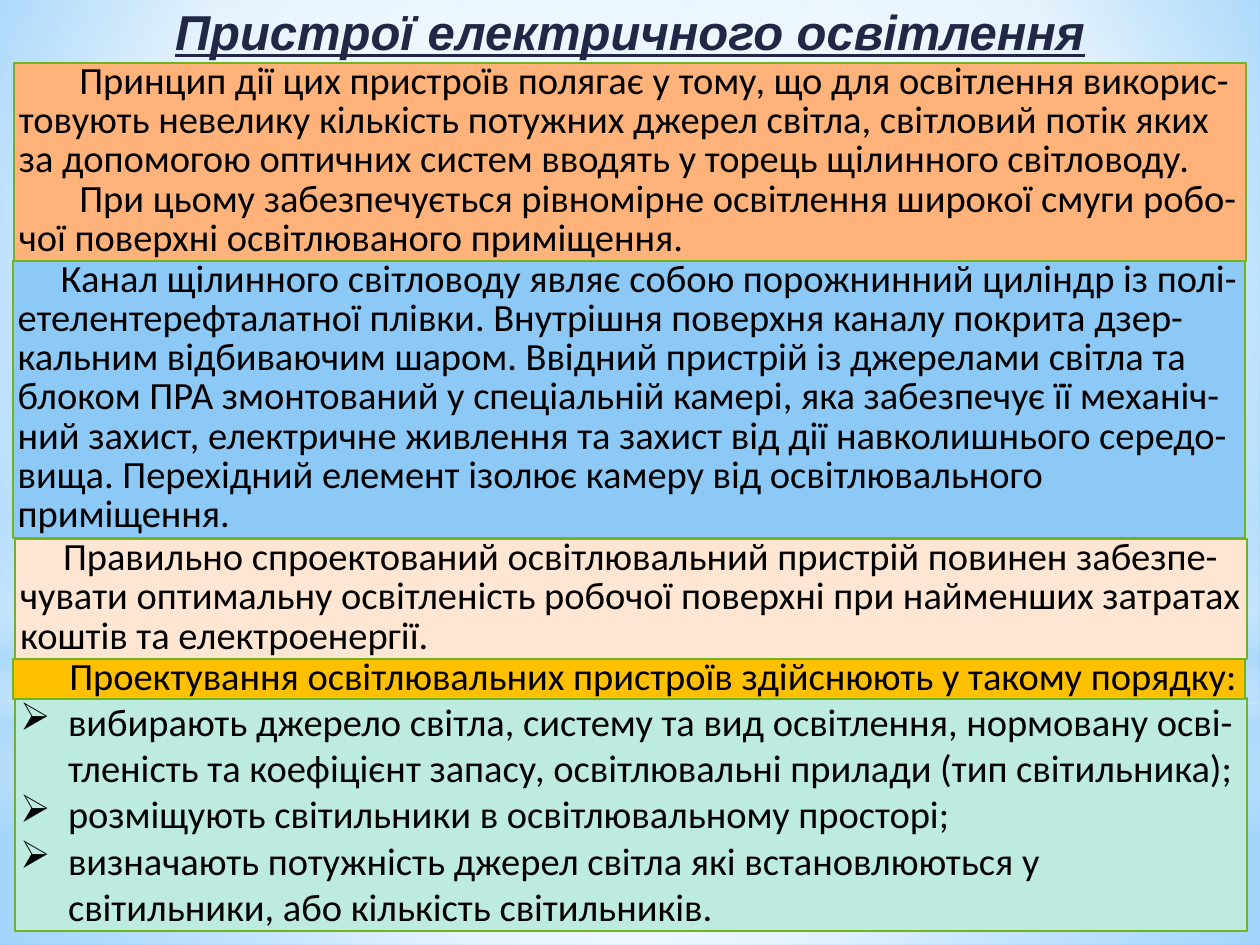
import pptx
import pptx.dml.color
import pptx.enum.shapes
import pptx.enum.text
import pptx.oxml
import pptx.oxml.ns
import pptx.util
from pptx.util import Inches

COLORS = {
    "title": "212745", "text": "000000", "border": "72B41D",
    "orange": "FFB37A", "blue": "8CC9F7", "peach": "FFE6D3",
    "mint": "BEEBDF", "amber": "FFC000",
    "white": "FFFFFF", "haze": "B4DCFA", "sky": "9ED5FF", "deep": "5BB9FF",
}
SHAPES = pptx.enum.shapes.MSO_SHAPE
CENTER = (50, 50, 50, 50)
PANEL_WIDTH = 9.78

# Background layers: shape, left, top, width, height, stops (position, color, opacity), focus
LAYERS = [
    (SHAPES.RECTANGLE, 0, 5.58, 10, 1.92,
     [(0, "white", 91), (37, "white", 76), (100, "haze", 79)], CENTER),
    (SHAPES.RECTANGLE, 0, 0, 10, 5.58,
     [(0, "white", 89), (48, "white", 62), (100, "haze", 79)], CENTER),
    (SHAPES.RECTANGLE, 0, 4.12, 10, 2.5,
     [(0, "white", 0), (29, "white", 30), (45, "haze", 40),
      (55, "white", 26), (65, "haze", 60), (100, "white", 0)], None),
    (SHAPES.OVAL, 0, 1.75, 10, 5.58,
     [(0, "white", 100), (56, "white", 0)], CENTER),
]

# Text panels: left, top, height, color, first-line indent, paragraphs
PANELS = [
    (0.11, 0.5, 1.57, "orange", 0.48, [
        "Принцип дії цих пристроїв полягає у тому, що для освітлення викорис-товують "
        "невелику кількість потужних джерел світла, світловий потік яких за допомогою "
        "оптичних систем вводять у торець щілинного світловоду.",
        "При цьому забезпечується рівномірне освітлення широкої смуги робо-чої "
        "поверхні освітлюваного приміщення."]),
    (0.1, 2.07, 2.2, "blue", 0.34, [
        "Канал щілинного світловоду являє собою порожнинний циліндр із "
        "полі-етелентерефталатної плівки. Внутрішня поверхня каналу покрита "
        "дзер-кальним відбиваючим шаром. Ввідний пристрій із джерелами світла та "
        "блоком ПРА змонтований у спеціальній камері, яка забезпечує її механіч-ний "
        "захист, електричне живлення та захист від дії навколишнього середо-вища. "
        "Перехідний елемент ізолює камеру від освітлювального приміщення."]),
    (0.12, 4.28, 0.95, "peach", 0.34, [
        "Правильно спроектований освітлювальний пристрій повинен забезпе-чувати "
        "оптимальну освітленість робочої поверхні при найменших затратах коштів та "
        "електроенергії."]),
    (0.1, 5.23, 0.32, "amber", 0.41, [
        "Проектування освітлювальних пристроїв здійснюють у такому порядку:"]),
]
STEPS = [
    "вибирають джерело світла, систему та вид освітлення, нормовану осві-тленість та "
    "коефіцієнт запасу, освітлювальні прилади (тип світильника);",
    "розміщують світильники в освітлювальному просторі;",
    "визначають потужність джерел світла які встановлюються у світильники, або "
    "кількість світильників.",
]


def rgb(name):
    return pptx.dml.color.RGBColor.from_string(COLORS[name])


def gradient(stops, focus):
    """Return a gradient fill: radial around focus, or vertical without one."""
    marks = "".join(
        f'<a:gs pos="{position * 1000}"><a:srgbClr val="{COLORS[color]}">'
        f'<a:alpha val="{opacity * 1000}"/></a:srgbClr></a:gs>'
        for position, color, opacity in stops)
    if focus:
        edges = " ".join(f'{side}="{value * 1000}"' for side, value in zip("ltrb", focus))
        direction = f'<a:path path="circle"><a:fillToRect {edges}/></a:path>'
    else:
        direction = '<a:lin ang="5400000" scaled="0"/>'
    return pptx.oxml.parse_xml(
        f'<a:gradFill {pptx.oxml.ns.nsdecls("a")} rotWithShape="1">'
        f'<a:gsLst>{marks}</a:gsLst>{direction}</a:gradFill>')


def replace_fill(solid, stops, focus):
    solid.getparent().replace(solid, gradient(stops, focus))


def add_background(slide):
    slide.background.fill.solid()
    solid = slide.element.xpath(".//p:bgPr/a:solidFill")[0]
    replace_fill(solid, [(0, "sky", 100), (60, "white", 100), (100, "deep", 100)],
                 (20, 10, 20, 60))
    for kind, left, top, width, height, stops, focus in LAYERS:
        layer = slide.shapes.add_shape(
            kind, Inches(left), Inches(top), Inches(width), Inches(height))
        layer.shadow.inherit = False
        layer.line.fill.background()
        layer.fill.solid()
        replace_fill(layer.element.xpath("./p:spPr/a:solidFill")[0], stops, focus)


def set_frame(box, side):
    frame = box.text_frame
    frame.word_wrap = True
    frame.auto_size = pptx.enum.text.MSO_AUTO_SIZE.SHAPE_TO_FIT_TEXT
    frame.vertical_anchor = pptx.enum.text.MSO_ANCHOR.TOP
    frame.margin_left = frame.margin_right = Inches(side)
    frame.margin_top = frame.margin_bottom = 0
    return frame


def add_span(para, text, font, size, color):
    span = para.add_run()
    span.text = text
    span.font.name = font
    span.font.size = pptx.util.Pt(size)
    span.font.color.rgb = rgb(color)
    return span


def add_title(slide, text):
    box = slide.shapes.add_textbox(Inches(0.12), Inches(0.08), Inches(9.76), Inches(0.4))
    para = set_frame(box, 0).paragraphs[0]
    para.alignment = pptx.enum.text.PP_ALIGN.CENTER
    para.line_spacing = 0.85
    span = add_span(para, text, "Arial", 28, "title")
    span.font.bold = span.font.italic = span.font.underline = True


def add_panel(slide, left, top, height, color, indent, texts, bullet=None):
    box = slide.shapes.add_shape(
        SHAPES.RECTANGLE, Inches(left), Inches(top), Inches(PANEL_WIDTH), Inches(height))
    box.shadow.inherit = False
    box.fill.solid()
    box.fill.fore_color.rgb = rgb(color)
    box.line.color.rgb = rgb("border")
    box.line.width = pptx.util.Pt(1.25)
    frame = set_frame(box, 0.04)
    for number, text in enumerate(texts):
        para = frame.add_paragraph() if number else frame.paragraphs[0]
        para.alignment = pptx.enum.text.PP_ALIGN.LEFT
        if not bullet:
            para.line_spacing = 0.85
        add_span(para, text, "Calibri", 22, "text")
        set_indent(para, indent, bullet)


def set_indent(para, indent, bullet):
    """Indent the first line, or hang the text behind a bullet."""
    properties = para._p.get_or_add_pPr()
    properties.set("marL", str(Inches(indent) if bullet else 0))
    properties.set("indent", str(Inches(-indent if bullet else indent)))
    if bullet:
        properties.append(pptx.oxml.parse_xml(
            f'<a:buChar {pptx.oxml.ns.nsdecls("a")} char="{bullet}"/>'))


def main():
    deck = pptx.Presentation()
    deck.slide_width, deck.slide_height = Inches(10), Inches(7.5)
    slide = deck.slides.add_slide(deck.slide_layouts[6])
    add_background(slide)
    add_title(slide, "Пристрої електричного освітлення")
    # The list of steps lies under the amber heading panel
    *explanations, heading = PANELS
    for panel in explanations:
        add_panel(slide, *panel)
    add_panel(slide, 0.12, 5.54, 1.85, "mint", 0.38, STEPS, bullet="➢")
    add_panel(slide, *heading)
    deck.save("out.pptx")


if __name__ == "__main__":
    main()
